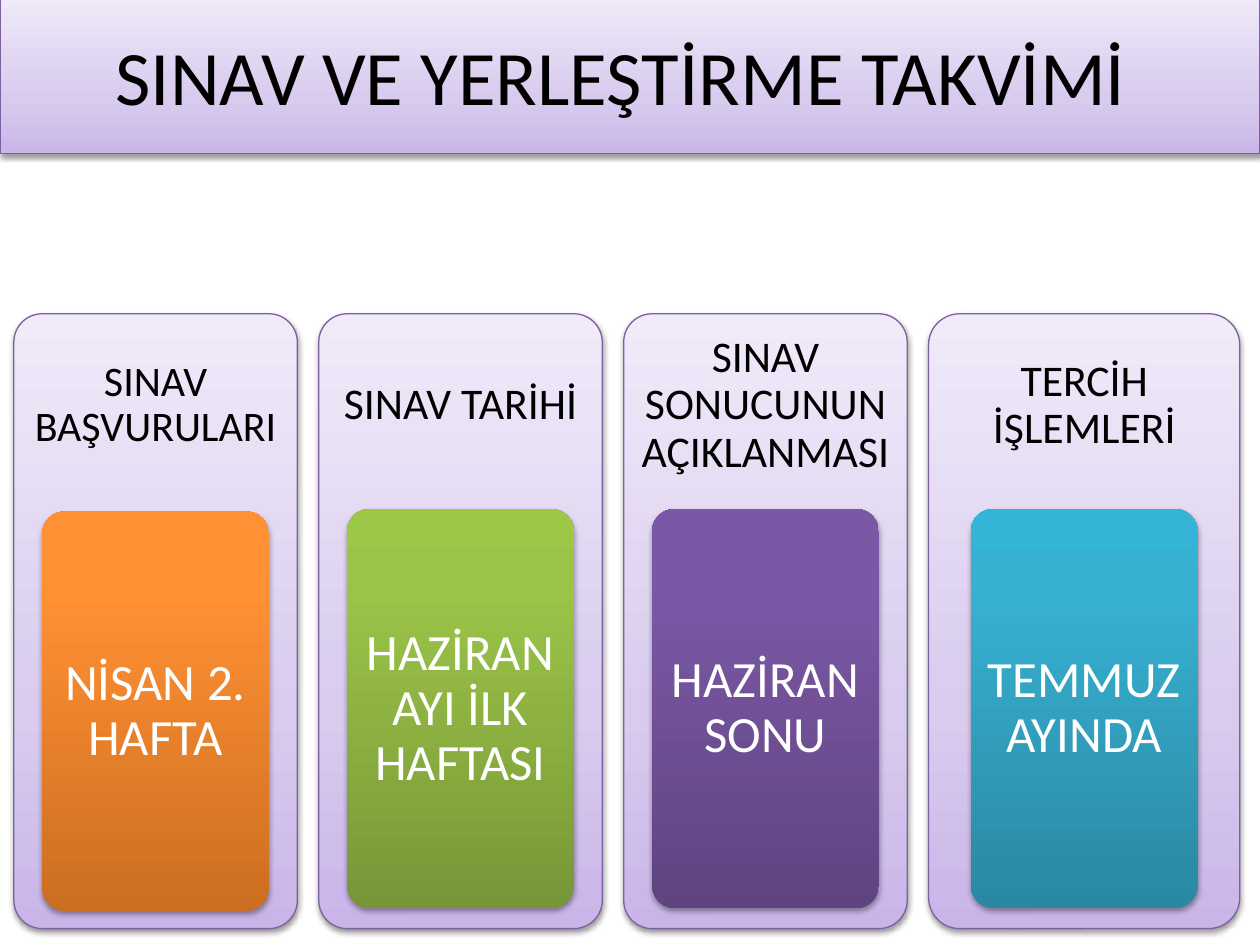
from pptx import Presentation
from pptx.dml.color import RGBColor
from pptx.enum.shapes import MSO_SHAPE as Shapes
from pptx.enum.text import MSO_ANCHOR as Anchor, MSO_AUTO_SIZE as AutoSize, PP_ALIGN as Align
from pptx.oxml import parse_xml
from pptx.oxml.ns import nsdecls, qn
from pptx.util import Inches, Pt

COLORS = {"black": "000000", "white": "FFFFFF", "border": "7D60A0"}

# Gradient stops run from bottom to top: {position in percent: colour}
GRADIENTS = {
    "lilac": {0: "C9B5E8", 35: "D8CBEE", 100: "F0EAF9"},
    "orange": {0: "CC6E20", 80: "FF9034", 100: "FF9136"},
    "green": {0: "779737", 80: "9BC348", 100: "9DC746"},
    "purple": {0: "5F4480", 80: "7B58A6", 100: "7C57A8"},
    "teal": {0: "2A88A2", 80: "37B1D2", 100: "34B4D6"},
}

# Heading, heading size, date, card colour, panel width
STEPS = [
    ("SINAV BAŞVURULARI", 24, "NİSAN 2. HAFTA", "orange", 2.25),
    ("SINAV TARİHİ", 25, "HAZİRAN AYI İLK HAFTASI", "green", 2.25),
    ("SINAV SONUCUNUN AÇIKLANMASI", 25, "HAZİRAN SONU", "purple", 2.25),
    ("TERCİH İŞLEMLERİ", 25, "TEMMUZ AYINDA", "teal", 2.47),
]


class CalendarSlide:
    """Holds the style, the current slide and the group of its columns."""

    font = "Calibri"

    def __init__(self, presentation):
        self.slide = presentation.slides.add_slide(presentation.slide_layouts[5])
        self.group = self.slide.shapes.add_group_shape()

    def paint(self, shape, gradient, bordered=True):
        shape.fill.gradient()
        shape.fill.gradient_angle = 90
        stops = shape._element.spPr.find(qn("a:gradFill")).find(qn("a:gsLst"))
        for stop in list(stops):
            stops.remove(stop)
        for position, color in GRADIENTS[gradient].items():
            stops.append(parse_xml(
                f'<a:gs {nsdecls("a")} pos="{position * 1000}">'
                f'<a:srgbClr val="{color}"/></a:gs>'))
        if bordered:
            shape.line.color.rgb = RGBColor.from_string(COLORS["border"])
            shape.line.width = Pt(0.75)
        else:
            shape.line.fill.background()
        self.add_shadow(shape, *((1.6, 38) if bordered else (1.8, 35)))

    def add_shadow(self, shape, distance, opacity):
        shape.shadow.inherit = False
        effects = shape._element.spPr.find(qn("a:effectLst"))
        effects.append(parse_xml(
            f'<a:outerShdw {nsdecls("a")} blurRad="{Pt(3.1)}" dist="{Pt(distance)}" '
            f'dir="5400000" rotWithShape="0"><a:srgbClr val="{COLORS["black"]}">'
            f'<a:alpha val="{opacity * 1000}"/></a:srgbClr></a:outerShdw>'))

    def add_text(self, shape, text, size, color):
        frame = shape.text_frame
        frame.word_wrap = True
        frame.auto_size = AutoSize.NONE
        frame.vertical_anchor = Anchor.MIDDLE
        paragraph = frame.paragraphs[0]
        paragraph.alignment = Align.CENTER
        run = paragraph.add_run()
        run.text = text
        run.font.name = self.font
        run.font.size = Pt(size)
        run.font.color.rgb = RGBColor.from_string(COLORS[color])
        return frame

    def title(self, text, left, top, width, height):
        title = self.slide.shapes.title
        title.left, title.top = Inches(left), Inches(top)
        title.width, title.height = Inches(width), Inches(height)
        self.paint(title, "lilac")
        self.add_text(title, text, 44, "black")

    def panel(self, gradient, left, top, width, height, bordered=True):
        panel = self.group.shapes.add_shape(
            Shapes.ROUNDED_RECTANGLE,
            Inches(left), Inches(top), Inches(width), Inches(height))
        panel.adjustments[0] = 0.1
        self.paint(panel, gradient, bordered)

    def label(self, text, size, color, left, top, width, height, margins=(0.1, 0.1)):
        box = self.group.shapes.add_textbox(
            Inches(left), Inches(top), Inches(width), Inches(height))
        frame = self.add_text(box, text, size, color)
        frame.paragraphs[0].line_spacing = 0.9
        frame.margin_left = frame.margin_right = Inches(margins[0])
        frame.margin_top = frame.margin_bottom = Inches(margins[1])


def main():
    presentation = Presentation()
    presentation.slide_width, presentation.slide_height = Inches(10), Inches(7.5)
    calendar = CalendarSlide(presentation)

    # Title band
    calendar.title("SINAV VE YERLEŞTİRME TAKVİMİ ", 0, -0.03, 10, 1.25)

    # One column per step: panel, heading, coloured card with its date
    top, pitch, card_width, card_height, inset = 2.49, 2.42, 1.8, 3.17, 0.05
    for index, (heading, size, date, color, width) in enumerate(STEPS):
        left = 0.11 + index * pitch
        card_left = left + (width - card_width) / 2
        card_top = 4.06 if index == 0 else 4.04
        calendar.panel("lilac", left, top, width, 4.88)
        calendar.label(heading, size, "black", left, top, width, 1.46)
        calendar.panel(color, card_left, card_top, card_width, card_height, bordered=False)
        calendar.label(date, 29, "white", card_left + inset, card_top + inset,
                       card_width - 2 * inset, card_height - 2 * inset, (0.08, 0.06))

    presentation.save("out.pptx")


if __name__ == "__main__":
    main()
